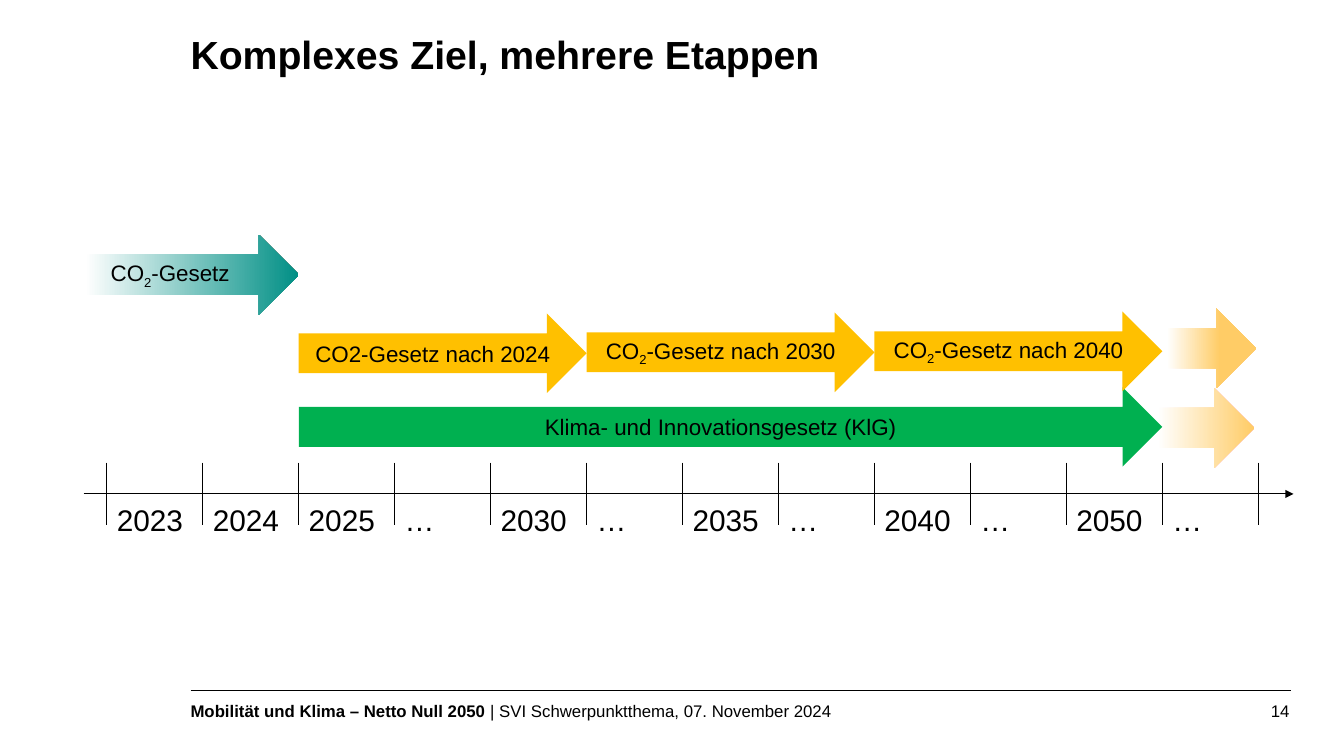
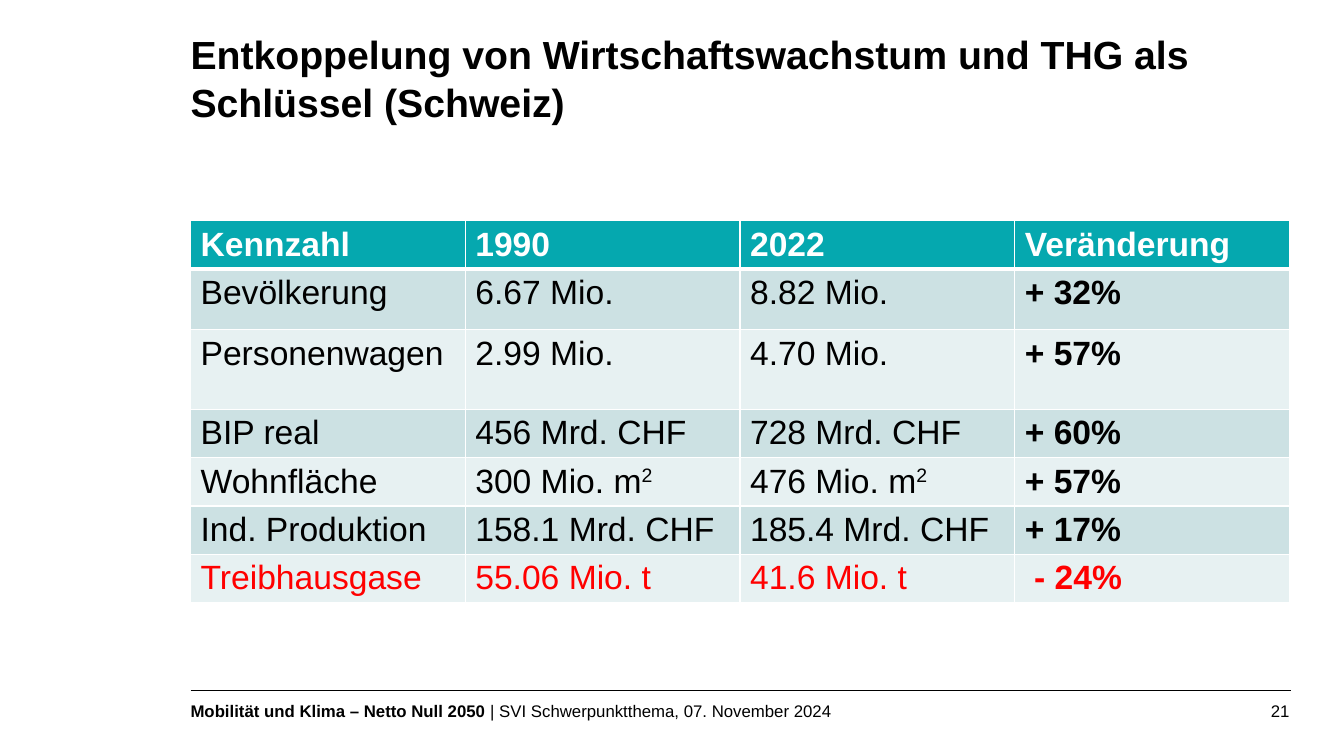
from lxml import etree
from pptx import Presentation
from pptx.dml.color import RGBColor
from pptx.enum import shapes, text
from pptx.oxml import ns
from pptx.util import Inches, Pt

FONT = "Arial"
BLACK, WHITE, RED = "000000", "FFFFFF", "FF0000"
TEAL, YELLOW, SAND, GREEN = "008F85", "FFC000", "FFCC66", "00B050"
HEADER_FILL, BAND_FILLS = "05A8AF", ("CCE1E3", "E7F1F2")
LEFT, CONTENT_WIDTH = 1.89, 10.91
SUBSCRIPT, SUPERSCRIPT = -25, 30


def color(value):
    return RGBColor.from_string(value)


def write(frame, runs, size, fill=BLACK, bold=False, align=text.PP_ALIGN.LEFT,
          anchor=text.MSO_ANCHOR.TOP, spacing=None, margins=None, wrap=True):
    """Write runs, each a string or a (string, format) pair, as one paragraph."""
    frame.word_wrap = wrap
    frame.auto_size = text.MSO_AUTO_SIZE.NONE
    frame.vertical_anchor = anchor
    if margins is not None:
        frame.margin_left = frame.margin_right = Inches(margins)
        frame.margin_top = frame.margin_bottom = Inches(margins)
    write_paragraph(frame.paragraphs[0], runs, size, fill, bold, align, spacing)


def write_paragraph(paragraph, runs, size, fill=BLACK, bold=False,
                    align=text.PP_ALIGN.LEFT, spacing=None):
    paragraph.alignment = align
    if spacing:
        paragraph.line_spacing = Pt(spacing)
    for piece in [runs] if isinstance(runs, str) else runs:
        words, style = (piece, {}) if isinstance(piece, str) else piece
        run = paragraph.add_run()
        run.text = words
        run.font.name = FONT
        run.font.size = Pt(size)
        run.font.bold = style.get("bold", bold)
        run.font.color.rgb = color(fill)
        if "baseline" in style:
            run.font._element.set("baseline", str(style["baseline"] * 1000))


def add_text(slide, left, top, width, height, runs, **style):
    box = slide.shapes.add_textbox(
        Inches(left), Inches(top), Inches(width), Inches(height))
    write(box.text_frame, runs, **style)


def add_line(slide, start, end, arrowhead=False):
    line = slide.shapes.add_connector(
        shapes.MSO_CONNECTOR.STRAIGHT, *(Inches(value) for value in start + end))
    line.line.color.rgb = color(BLACK)
    line.line.width = Pt(0.75)
    etree.SubElement(line._element.spPr, ns.qn("a:effectLst"))
    if arrowhead:
        tail = etree.SubElement(line.line._get_or_add_ln(), ns.qn("a:tailEnd"))
        tail.set("type", "triangle")


def add_block_arrow(slide, left, top, width, fill, label=None, fade=None):
    """Add a right arrow; fade gives the start and end of a blend from white."""
    arrow = slide.shapes.add_shape(
        shapes.MSO_SHAPE.RIGHT_ARROW,
        Inches(left), Inches(top), Inches(width), Inches(0.79))
    arrow.shadow.inherit = False
    arrow.line.fill.background()
    if fade:
        arrow.fill.gradient()
        arrow.fill.gradient_angle = 0
        for stop, position, shade in zip(
                arrow.fill.gradient_stops, fade, (WHITE, fill)):
            stop.position = position
            stop.color.rgb = color(shade)
    else:
        arrow.fill.solid()
        arrow.fill.fore_color.rgb = color(fill)
    if label:
        write(arrow.text_frame, label, size=16, align=text.PP_ALIGN.CENTER,
              anchor=text.MSO_ANCHOR.MIDDLE)


def add_titled_slide(presentation, title, number):
    """Add a slide with the shared title, footer rule, footer and page number."""
    slide = presentation.slides.add_slide(presentation.slide_layouts[5])
    heading = slide.shapes.title
    heading.left, heading.top = Inches(LEFT), Inches(0.3)
    heading.width, heading.height = Inches(CONTENT_WIDTH), Inches(0.98)
    write(heading.text_frame, title, size=28, bold=True, spacing=34, margins=0)

    add_line(slide, (LEFT, 6.85), (LEFT + CONTENT_WIDTH, 6.85))
    footer = [("Mobilität und Klima – Netto Null 2050", {"bold": True}),
              " | SVI Schwerpunktthema, 07. November 2024"]
    add_text(slide, LEFT, 6.93, 7.9, 0.2, footer, size=12, spacing=16, margins=0)
    add_text(slide, 12.14, 6.93, 0.65, 0.2, str(number), size=12, spacing=16,
             margins=0, align=text.PP_ALIGN.RIGHT)
    return slide


def co2_law(suffix=""):
    return ["CO", ("2", {"baseline": SUBSCRIPT}), "-Gesetz" + suffix]


def add_timeline(slide, left, top, width):
    """Draw the law arrows above an axis of evenly spaced years."""
    years = ["2023", "2024", "2025", "…", "2030", "…",
             "2035", "…", "2040", "…", "2050", "…"]
    first_tick = left + 0.45
    step = (width - 0.8) / len(years)
    ticks = [first_tick + step * index for index in range(len(years) + 1)]
    axis = top + 2.57

    add_line(slide, (left + 0.22, axis), (left + width, axis), arrowhead=True)
    for tick in ticks:
        add_line(slide, (tick, axis - 0.31), (tick, axis + 0.31))
    for tick, year in zip(ticks, years):
        add_text(slide, tick, axis + 0.03, step, 0.46, year, size=21.3)

    add_block_arrow(slide, left, top, ticks[2] - left, TEAL, co2_law(),
                    fade=(0.1, 1))
    add_block_arrow(slide, ticks[11] - 0.58, top + 1.52, 1.49, SAND,
                    fade=(0.36, 1))
    add_block_arrow(slide, ticks[2], top + 1.51, ticks[11] - ticks[2], GREEN,
                    "Klima- und Innovationsgesetz (KlG)")
    add_block_arrow(slide, ticks[11] - 0.45, top + 0.73, 1.38, SAND,
                    fade=(0.36, 0.74))
    phases = [(2, 0.78, "CO2-Gesetz nach 2024"),
              (5, 0.77, co2_law(" nach 2030")),
              (8, 0.76, co2_law(" nach 2040"))]
    for tick, offset, label in phases:
        add_block_arrow(slide, ticks[tick], top + offset, 3 * step, YELLOW, label)


def set_borders(cell, bottom_width):
    properties = cell._tc.get_or_add_tcPr()
    widths = {"lnL": 1, "lnR": 1, "lnT": 1, "lnB": bottom_width}
    for index, (side, width) in enumerate(widths.items()):
        border = etree.Element(ns.qn("a:" + side), w=str(Pt(width)))
        fill = etree.SubElement(border, ns.qn("a:solidFill"))
        etree.SubElement(fill, ns.qn("a:srgbClr"), val=WHITE)
        properties.insert(index, border)


def add_indicator_table(slide, left, top, width):
    square = ("2", {"baseline": SUPERSCRIPT})
    rows = [
        ("Kennzahl", "1990", "2022", "Veränderung"),
        ("Bevölkerung", "6.67 Mio.", "8.82 Mio.", "+ 32%"),
        ("Personenwagen", "2.99 Mio.", "4.70 Mio.", "+ 57%"),
        ("BIP real", "456 Mrd. CHF", "728 Mrd. CHF", "+ 60%"),
        ("Wohnfläche", ["300 Mio. m", square], ["476 Mio. m", square], "+ 57%"),
        ("Ind. Produktion", "158.1 Mrd. CHF", "185.4 Mrd. CHF", "+ 17%"),
        ("Treibhausgase", "55.06 Mio. t", "41.6 Mio. t", " - 24%"),
    ]
    heights = [0.48, 0.6, 0.79] + [0.48] * 4
    table = slide.shapes.add_table(
        len(rows), len(rows[0]), Inches(left), Inches(top),
        Inches(width), Inches(sum(heights))).table
    for row, height in zip(table.rows, heights):
        row.height = Inches(height)
    for row_index, values in enumerate(rows):
        header = row_index == 0
        ink = WHITE if header else RED if row_index == len(rows) - 1 else BLACK
        for column, value in enumerate(values):
            cell = table.cell(row_index, column)
            cell.fill.solid()
            cell.fill.fore_color.rgb = color(
                HEADER_FILL if header else BAND_FILLS[(row_index - 1) % 2])
            set_borders(cell, 3 if header else 1)
            write_paragraph(cell.text_frame.paragraphs[0], value, size=24,
                            fill=ink, bold=header or column == len(values) - 1)


def main():
    presentation = Presentation()
    presentation.slide_width = Inches(13.33)
    presentation.slide_height = Inches(7.5)

    slide = add_titled_slide(presentation, "Komplexes Ziel, mehrere Etappen", 14)
    add_timeline(slide, 0.61, 2.33, 12.22)

    slide = add_titled_slide(
        presentation,
        "Entkoppelung von Wirtschaftswachstum und THG als Schlüssel (Schweiz)", 21)
    add_indicator_table(slide, LEFT, 2.19, 10.9)

    presentation.save("out.pptx")


if __name__ == "__main__":
    main()
